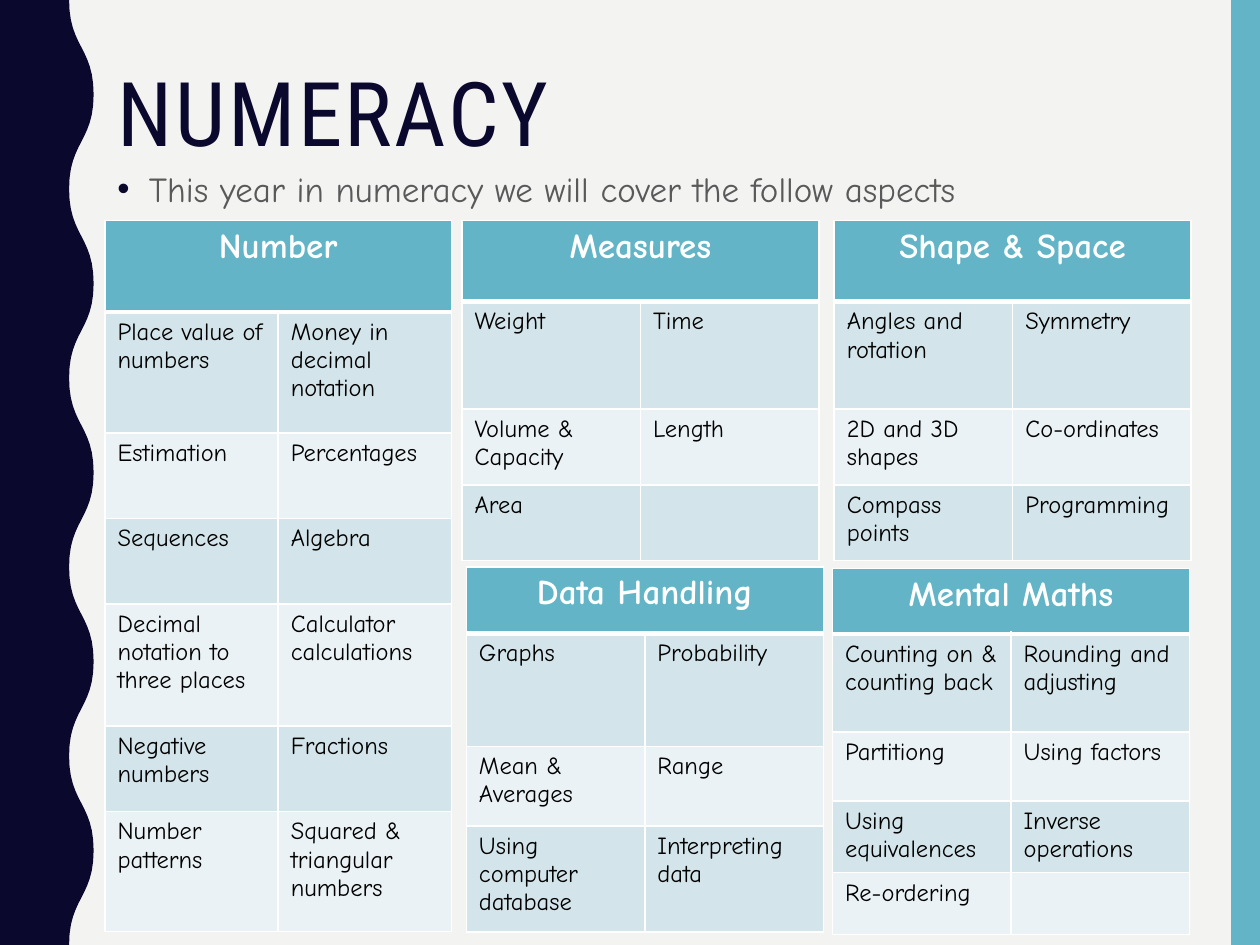
from dataclasses import dataclass

from lxml.etree import SubElement
from pptx import Presentation
from pptx.dml.color import RGBColor
from pptx.enum.shapes import MSO_SHAPE
from pptx.enum.text import MSO_ANCHOR, PP_ALIGN
from pptx.oxml.ns import qn
from pptx.util import Pt


@dataclass(frozen=True)
class Theme:
    background: str = "F3F3F2"
    navy: str = "0B082E"
    teal: str = "62B4C6"
    bands: tuple = ("D3E5EA", "EAF2F5")
    white: str = "FFFFFF"
    black: str = "000000"
    grey: str = "595959"
    title_font: str = "Roboto Condensed"
    body_font: str = "Comic Neue"
    title_size: int = 51
    heading_size: int = 20
    cell_size: int = 14


THEME = Theme()
WIDTH, HEIGHT = 720, 540
TITLE = "NUMERACY"
INTRO = "This year in numeracy we will cover the follow aspects"

# Each topic: heading, (left, top, width), row heights, cell texts
TOPICS = [
    ("Number", (60, 126, 198), (52.3, 69, 49, 49, 69.5, 49, 68.5), [
        ("Place value of numbers", "Money in decimal notation"),
        ("Estimation", "Percentages"),
        ("Sequences", "Algebra"),
        ("Decimal notation to three places", "Calculator calculations"),
        ("Negative numbers", "Fractions"),
        ("Number patterns", "Squared & triangular numbers"),
    ]),
    ("Measures", (264, 126, 204), (46.3, 61.5, 43.3, 43.3), [
        ("Weight", "Time"),
        ("Volume & Capacity", "Length"),
        ("Area", ""),
    ]),
    ("Shape & Space", (476.7, 126, 204), (46.3, 61.5, 43.3, 43.3), [
        ("Angles and rotation", "Symmetry"),
        ("2D and 3D shapes", "Co-ordinates"),
        ("Compass points", "Programming"),
    ]),
    ("Data Handling", (266.5, 324, 204), (38, 64.5, 45.5, 60.5), [
        ("Graphs", "Probability"),
        ("Mean & Averages", "Range"),
        ("Using computer database", "Interpreting data"),
    ]),
    ("Mental Maths", (475.7, 325, 204), (37.2, 56.2, 39.5, 39.5, 35.3), [
        ("Counting on & counting back", "Rounding and adjusting"),
        ("Partitiong", "Using factors"),
        ("Using equivalences", "Inverse operations"),
        ("Re-ordering", ""),
    ]),
]


def colour(value):
    return RGBColor.from_string(value)


def format_text(paragraph, font_name, size, value, bold=False):
    for run in paragraph.runs:
        run.font.name = font_name
        run.font.size = Pt(size)
        run.font.bold = bold
        run.font.color.rgb = colour(value)


def fill_plain(shape, value):
    shape.shadow.inherit = False
    shape.fill.solid()
    shape.fill.fore_color.rgb = colour(value)
    shape.line.fill.background()


def place(shape, left, top, width, height):
    shape.left, shape.top, shape.width, shape.height = map(Pt, (left, top, width, height))


def add_wavy_edge(slide, trough=39.5, crest=53.5, half_waves=10, steps=12):
    """Navy band whose right side swings between trough and crest."""
    half_height = HEIGHT / half_waves
    points = []
    for wave in range(half_waves):
        start, end = (trough, crest) if wave % 2 == 0 else (crest, trough)
        for step in range(1, steps + 1):
            t = step / steps
            x = start + (end - start) * t * t * (3 - 2 * t)
            y = half_height * (wave + 1.5 * t * (1 - t) + t ** 3)
            points.append((Pt(x), Pt(y)))
    builder = slide.shapes.build_freeform(0, 0)
    builder.add_line_segments([(Pt(trough), 0)] + points + [(0, Pt(HEIGHT))])
    fill_plain(builder.convert_to_shape(), THEME.navy)


def add_title(slide):
    title = slide.shapes.title
    place(title, 60, 36, 624, 84)
    frame = title.text_frame
    frame.text = TITLE
    frame.vertical_anchor = MSO_ANCHOR.TOP
    paragraph = frame.paragraphs[0]
    paragraph.alignment = PP_ALIGN.LEFT
    paragraph.line_spacing = 0.9
    format_text(paragraph, THEME.title_font, THEME.title_size, THEME.navy)
    paragraph.runs[0].font._element.set("spc", "150")


def add_intro(slide):
    box = slide.shapes.add_textbox(Pt(60), Pt(90), Pt(624), Pt(36))
    box.text_frame.word_wrap = True
    paragraph = box.text_frame.paragraphs[0]
    paragraph.text = INTRO
    paragraph.line_spacing = 1.1
    paragraph.space_before = Pt(7)
    format_text(paragraph, THEME.body_font, THEME.heading_size, THEME.grey)
    properties = paragraph._p.get_or_add_pPr()
    properties.set("marL", str(Pt(18)))
    properties.set("indent", str(Pt(-18)))
    bullet_colour = SubElement(properties, qn("a:buClr"))
    SubElement(bullet_colour, qn("a:srgbClr"), val=THEME.navy)
    SubElement(properties, qn("a:buFont"), typeface="Arial")
    SubElement(properties, qn("a:buChar"), char="•")


def set_borders(cell, top, bottom):
    properties = cell._tc.get_or_add_tcPr()
    for side, width in (("L", 1), ("R", 1), ("T", top), ("B", bottom)):
        line = SubElement(properties, qn(f"a:ln{side}"), w=str(Pt(width)))
        fill = SubElement(line, qn("a:solidFill"))
        SubElement(fill, qn("a:srgbClr"), val=THEME.white)


def style_cell(cell, row):
    is_heading = row == 0
    set_borders(cell, 3 if row == 1 else 1, 3 if is_heading else 1)
    cell.fill.solid()
    cell.fill.fore_color.rgb = colour(THEME.teal if is_heading else THEME.bands[(row - 1) % 2])
    paragraph = cell.text_frame.paragraphs[0]
    if is_heading:
        paragraph.alignment = PP_ALIGN.CENTER
        format_text(paragraph, THEME.body_font, THEME.heading_size, THEME.white, bold=True)
    else:
        format_text(paragraph, THEME.body_font, THEME.cell_size, THEME.black)


def add_topic(slide, heading, position, heights, rows):
    left, top, width = position
    table = slide.shapes.add_table(
        len(heights), 2, Pt(left), Pt(top), Pt(width), Pt(sum(heights))).table
    for column in table.columns:
        column.width = Pt(width / 2)
    for row, (height, texts) in enumerate(zip(heights, [(heading, "")] + rows)):
        table.rows[row].height = Pt(height)
        for column, text in enumerate(texts):
            cell = table.cell(row, column)
            if text:
                cell.text = text
            style_cell(cell, row)
    table.cell(0, 0).merge(table.cell(0, 1))


def main():
    presentation = Presentation()
    presentation.slide_width, presentation.slide_height = Pt(WIDTH), Pt(HEIGHT)
    slide = presentation.slides.add_slide(presentation.slide_layouts.get_by_name("Title Only"))
    slide.background.fill.solid()
    slide.background.fill.fore_color.rgb = colour(THEME.background)
    side_bar = slide.shapes.add_shape(
        MSO_SHAPE.RECTANGLE, Pt(703.5), 0, Pt(16.5), Pt(HEIGHT))
    fill_plain(side_bar, THEME.teal)
    add_wavy_edge(slide)
    add_title(slide)
    add_intro(slide)
    for topic in TOPICS:
        add_topic(slide, *topic)
    presentation.save("out.pptx")


if __name__ == "__main__":
    main()
